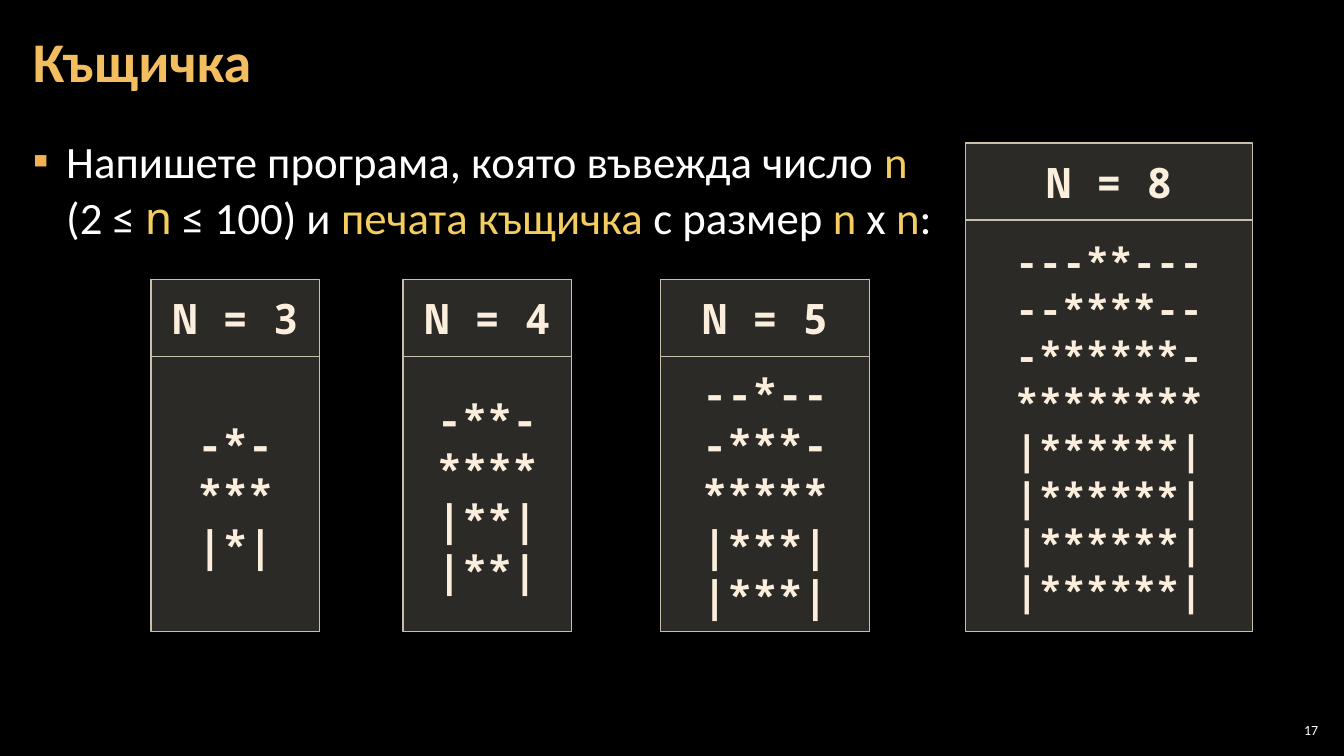
from pptx import Presentation
from pptx.dml.color import RGBColor
from pptx.enum.shapes import MSO_SHAPE
from pptx.enum.text import MSO_ANCHOR, PP_ALIGN
from pptx.oxml.ns import qn
from pptx.util import Cm, Pt
from lxml.etree import SubElement

BLACK = RGBColor(0x00, 0x00, 0x00)
WHITE = RGBColor(0xFF, 0xFF, 0xFF)
GOLD = RGBColor(0xF3, 0xBE, 0x60)
YELLOW = RGBColor(0xF3, 0xCD, 0x60)
ORANGE = RGBColor(0xF2, 0xB2, 0x54)
CREAM = RGBColor(0xFB, 0xEE, 0xDC)
PANEL = RGBColor(0xD9, 0xD5, 0xC7)
BORDER = RGBColor(0xC7, 0xBF, 0xAC)
SANS, MONO = "Calibri", "Noto Sans Mono"


def house(n):
    """Rows of a house of size n: a widening roof, then walls."""
    roof = [("*" * stars).center(n, "-") for stars in range(2 - n % 2, n + 1, 2)]
    return roof + ["|" + "*" * (n - 2) + "|"] * (n // 2)


class Deck:
    def __init__(self):
        self.prs = Presentation()
        self.prs.slide_width, self.prs.slide_height = Cm(33.87), Cm(19.05)
        self.s = self.prs.slides.add_slide(self.prs.slide_layouts[6])
        self.s.background.fill.solid()
        self.s.background.fill.fore_color.rgb = BLACK

    def run(self, p, text, color, **style):
        r = p.add_run()
        r.text = text
        r.font.color.rgb = color
        for name, value in style.items():
            setattr(r.font, name, value)

    def frame(self, sp, **style):
        tf = sp.text_frame
        for name, value in {"word_wrap": True, **style}.items():
            setattr(tf, name, value)
        return tf

    def text(self, x, y, w, h, runs, size, side=Cm(0.3), anchor=MSO_ANCHOR.TOP,
             bold=False, **para):
        sp = self.s.shapes.add_textbox(Cm(x), Cm(y), Cm(w), Cm(h))
        tf = self.frame(sp, vertical_anchor=anchor, margin_left=side, margin_right=side,
                        margin_top=Cm(0.1), margin_bottom=Cm(0.1))
        p = tf.paragraphs[0]
        for name, value in para.items():
            setattr(p, name, value)
        for text, color, font in runs:
            self.run(p, text, color, name=font, size=Pt(size), bold=bold)
        return p

    def bullet(self, p, char, color, indent):
        pPr = p._p.get_or_add_pPr()
        pPr.set("marL", str(indent))
        pPr.set("indent", str(-indent))
        clr = SubElement(pPr, qn("a:buClr"))
        SubElement(clr, qn("a:srgbClr"), val=str(color))
        SubElement(pPr, qn("a:buFont"), typeface=SANS)
        SubElement(pPr, qn("a:buChar"), char=char)

    def panel(self, x, y, w, h, lines, size):
        sp = self.s.shapes.add_shape(MSO_SHAPE.RECTANGLE, Cm(x), Cm(y), Cm(w), Cm(h))
        sp.shadow.inherit = False
        sp.fill.solid()
        sp.fill.fore_color.rgb = PANEL
        fill_color = sp._element.spPr.find(qn("a:solidFill"))[0]
        SubElement(fill_color, qn("a:alpha"), val="20000")
        sp.line.color.rgb = BORDER
        sp.line.width = Pt(1)
        tf = self.frame(sp, vertical_anchor=MSO_ANCHOR.MIDDLE)
        for i, line in enumerate(lines):
            p = tf.add_paragraph() if i else tf.paragraphs[0]
            p.alignment = PP_ALIGN.CENTER
            self.run(p, line, CREAM, name=MONO, size=Pt(size), bold=True)

    def example(self, n, x, y, w, size):
        head, bottom = 1.94, 15.91
        self.panel(x, y + head, w, bottom - y - head, house(n), size)
        self.panel(x, y, w, head, [f"N = {n}"], 30)


def main():
    deck = Deck()

    # Title
    deck.text(0.53, 0.1, 32.8, 3.07, [("Къщичка", GOLD, SANS)], 40,
              anchor=MSO_ANCHOR.MIDDLE, bold=True, line_spacing=0.9)

    # Task statement
    task = [("Напишете програма, която въвежда число ", WHITE, SANS),
            ("n", YELLOW, SANS), (" (2 ≤ ", WHITE, SANS), ("n", YELLOW, MONO),
            (" ≤ 100) и ", WHITE, SANS), ("печата къщичка ", YELLOW, SANS),
            ("с размер ", WHITE, SANS), ("n", YELLOW, SANS),
            (" x ", WHITE, SANS), ("n", YELLOW, SANS), (":", WHITE, SANS)]
    p = deck.text(0.53, 3.2, 23.6, 15.47, task, 32, line_spacing=1.05, space_after=Pt(6))
    deck.bullet(p, "▪", ORANGE, Cm(0.84))

    # Example houses
    for n, x, y, w, size in [(3, 3.81, 7.04, 4.24, 30), (4, 10.16, 7.04, 4.24, 30),
                             (5, 16.64, 7.04, 5.28, 30), (8, 24.33, 3.6, 7.24, 28)]:
        deck.example(n, x, y, w, size)

    # Slide number
    deck.text(32.13, 18.14, 1.19, 0.53, [("17", WHITE, SANS)], 10, side=Cm(0.1),
              anchor=MSO_ANCHOR.MIDDLE, alignment=PP_ALIGN.RIGHT)

    deck.prs.save("out.pptx")


if __name__ == "__main__":
    main()
